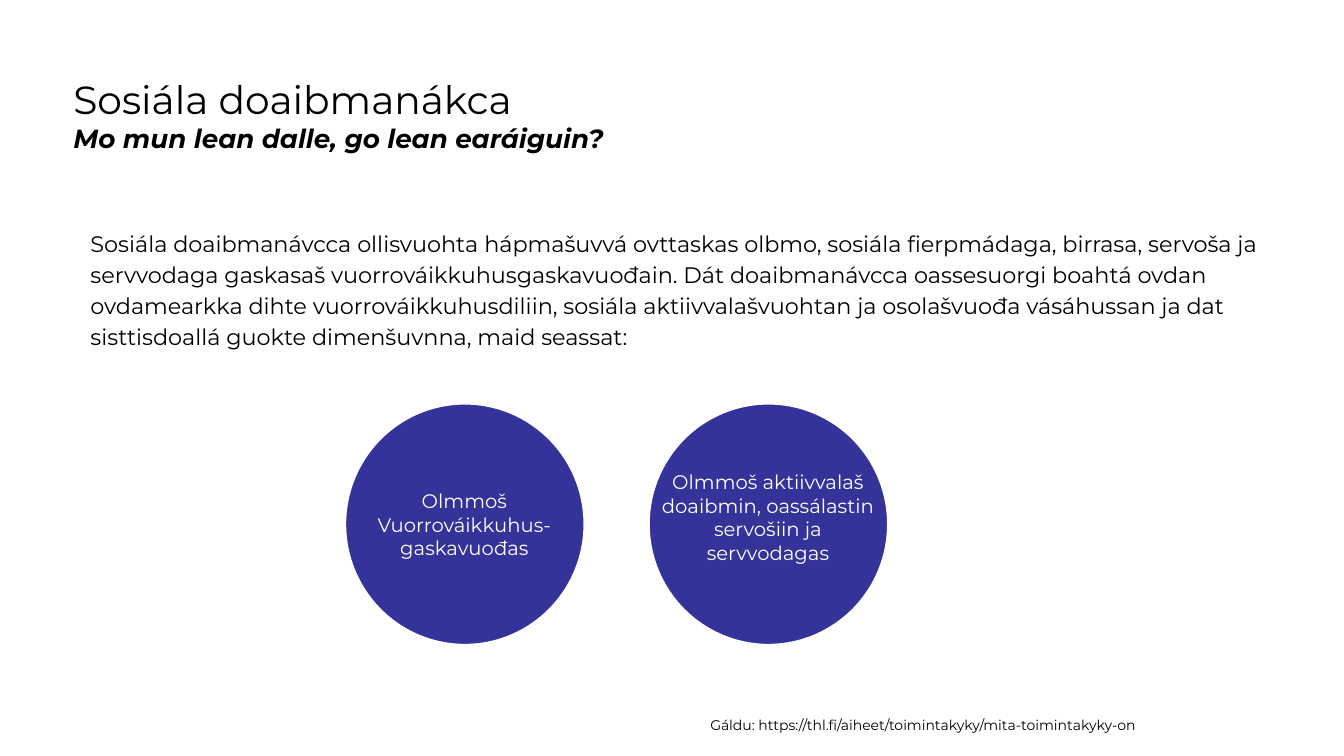
from copy import deepcopy

from lxml.etree import SubElement
from pptx import Presentation
from pptx.dml.color import RGBColor
from pptx.enum.shapes import MSO_SHAPE
from pptx.enum.text import MSO_ANCHOR, MSO_AUTO_SIZE, PP_ALIGN
from pptx.oxml.ns import qn
from pptx.util import Cm, Pt

INK, WHITE, INDIGO = "000000", "FFFFFF", "333399"
CIRCLE_LEFT, CIRCLE_TOP, CIRCLE_PITCH = 8.69, 10.16, 7.65
DIMENSIONS = [
    (["Olmmoš", "Vuorrováikkuhus-gaskavuođas"], 11.3, 0.55),
    (["Olmmoš aktiivvalaš doaibmin, oassálastin servošiin ja servvodagas"], 10.87, 0.05),
]


def color(hex_string):
    return RGBColor.from_string(hex_string)


def write(paragraph, text, size, ink=INK, bold=False, italic=False, align=PP_ALIGN.LEFT):
    paragraph.alignment = align
    run = paragraph.add_run()
    run.text = text
    run.font.name = "Montserrat"
    run.font.size = Pt(size)
    run.font.bold = bold
    run.font.italic = italic
    run.font.color.rgb = color(ink)
    return run


def set_frame(frame, anchor, left, top, right, bottom):
    frame.word_wrap = True
    frame.auto_size = MSO_AUTO_SIZE.NONE
    frame.vertical_anchor = anchor
    frame.margin_left, frame.margin_top = Cm(left), Cm(top)
    frame.margin_right, frame.margin_bottom = Cm(right), Cm(bottom)


class SlideBuilder:
    """Holds the slide and places its elements in one common style."""

    def __init__(self, presentation):
        self.slide = presentation.slides.add_slide(presentation.slide_layouts[1])

    def place(self, placeholder, left, top, width, height):
        placeholder.left, placeholder.top = Cm(left), Cm(top)
        placeholder.width, placeholder.height = Cm(width), Cm(height)
        set_frame(placeholder.text_frame, MSO_ANCHOR.TOP, 0.25, 0.25, 0.25, 0.25)
        return placeholder.text_frame.paragraphs[0]

    def title(self, heading, question):
        paragraph = self.place(self.slide.shapes.title, 1.6, 1.65, 30.68, 2.13)
        heading_run = write(paragraph, heading, 28)
        paragraph.add_line_break()
        paragraph._p[-1].append(deepcopy(heading_run._r.rPr))
        write(paragraph, question, 18.7, bold=True, italic=True)

    def body(self, text):
        paragraph = self.place(self.slide.placeholders[1], 1.6, 5.46, 30.68, 3.86)
        properties = paragraph._p.get_or_add_pPr()
        properties.set("marL", str(Cm(0.43)))
        properties.set("indent", "0")
        SubElement(properties, qn("a:buNone"))
        paragraph.line_spacing = 1.15
        paragraph.space_before = Pt(0)
        write(paragraph, text, 16)

    def circle(self, left, lines, label_top, bottom_inset):
        group = self.slide.shapes.add_group_shape()
        disc = group.shapes.add_shape(
            MSO_SHAPE.OVAL, Cm(left), Cm(CIRCLE_TOP), Cm(6.05), Cm(6.1))
        disc.shadow.inherit = False
        disc.fill.solid()
        disc.fill.fore_color.rgb = color(INDIGO)
        disc.line.color.rgb = color(WHITE)
        disc.line.width = Pt(2)
        label = group.shapes.add_textbox(
            Cm(left + 0.21), Cm(label_top), Cm(5.61), Cm(4.32)).text_frame
        set_frame(label, MSO_ANCHOR.MIDDLE, 0.05, 0.05, 0.05, bottom_inset)
        for index, line in enumerate(lines):
            paragraph = label.add_paragraph() if index else label.paragraphs[0]
            write(paragraph, line, 14, ink=WHITE, align=PP_ALIGN.CENTER)

    def reference(self, text):
        frame = self.slide.shapes.add_textbox(
            Cm(17.65), Cm(17.93), Cm(11.51), Cm(1.12)).text_frame
        frame.word_wrap = False
        frame.auto_size = MSO_AUTO_SIZE.SHAPE_TO_FIT_TEXT
        write(frame.paragraphs[0], text, 10)


def main():
    presentation = Presentation()
    presentation.slide_width, presentation.slide_height = Cm(33.87), Cm(19.05)
    builder = SlideBuilder(presentation)
    builder.title("Sosiála doaibmanákca", "Mo mun lean dalle, go lean earáiguin?")
    builder.body(
        "Sosiála doaibmanávcca ollisvuohta hápmašuvvá ovttaskas olbmo, sosiála "
        "fierpmádaga, birrasa, servoša ja servvodaga gaskasaš "
        "vuorrováikkuhusgaskavuođain. Dát doaibmanávcca oassesuorgi boahtá ovdan "
        "ovdamearkka dihte vuorrováikkuhusdiliin, sosiála aktiivvalašvuohtan ja "
        "osolašvuođa vásáhussan ja dat sisttisdoallá guokte dimenšuvnna, maid seassat:")
    for index, (lines, label_top, bottom_inset) in enumerate(DIMENSIONS):
        builder.circle(CIRCLE_LEFT + index * CIRCLE_PITCH, lines, label_top, bottom_inset)
    builder.reference("Gáldu: https://thl.fi/aiheet/toimintakyky/mita-toimintakyky-on")
    presentation.save("out.pptx")


if __name__ == "__main__":
    main()
